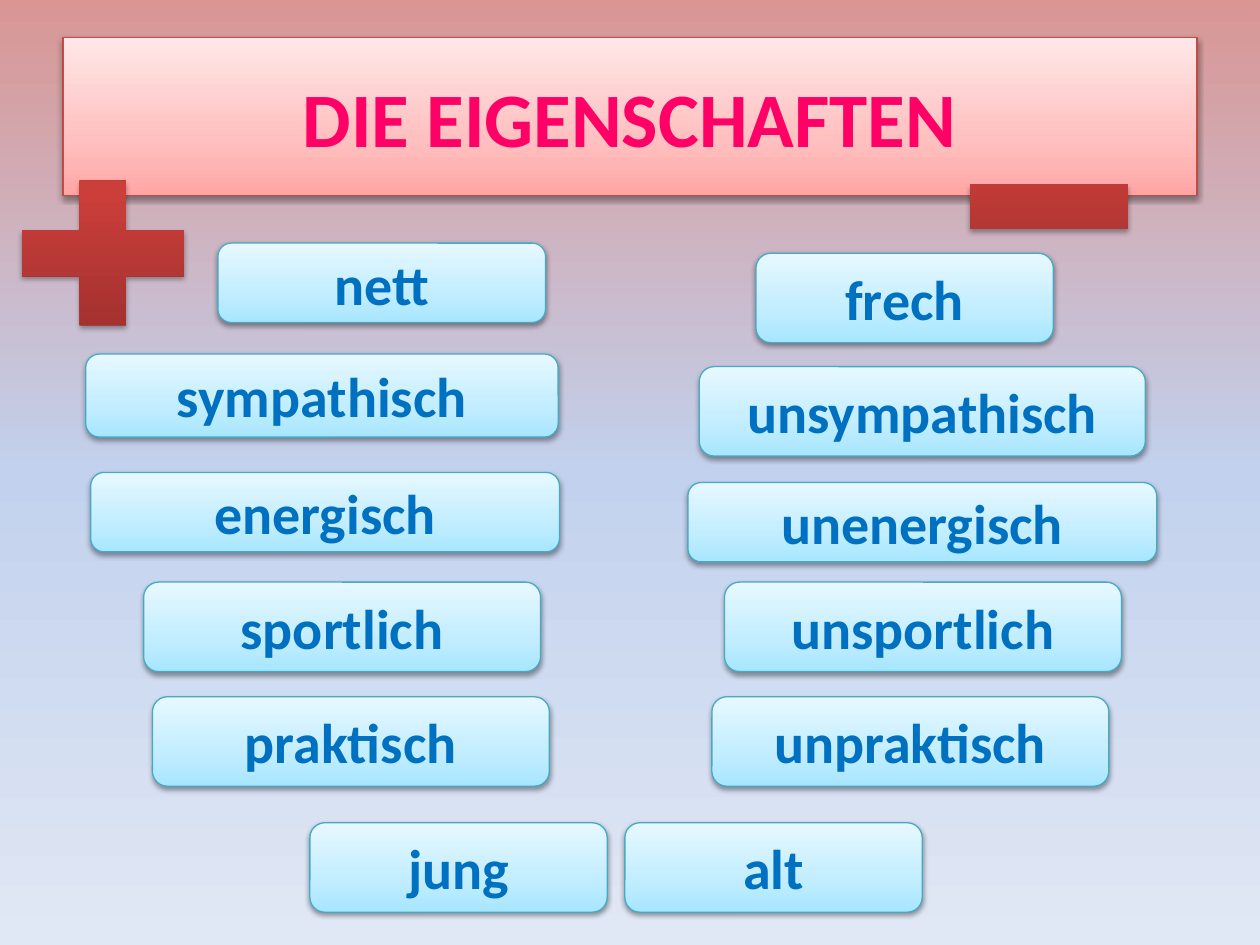
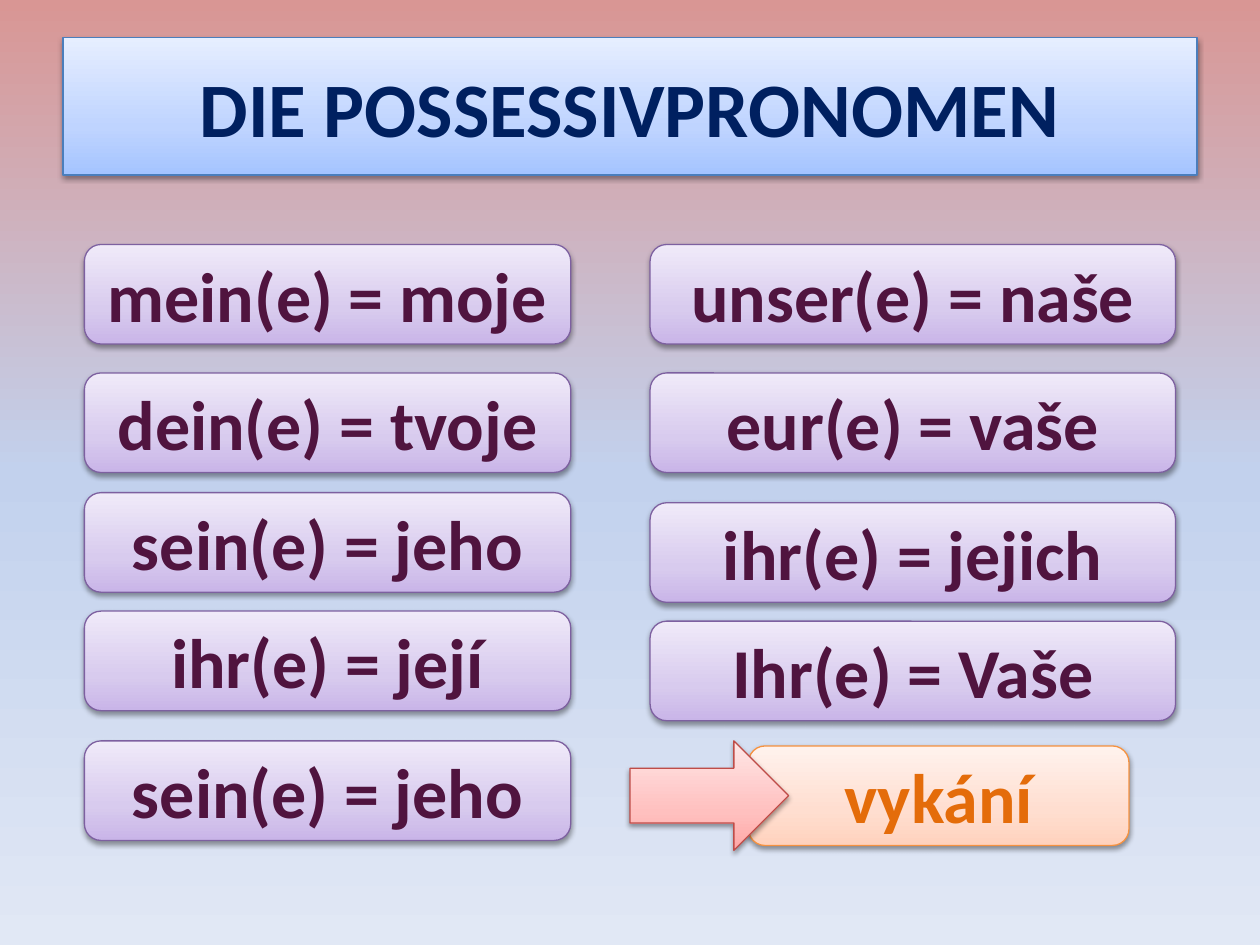
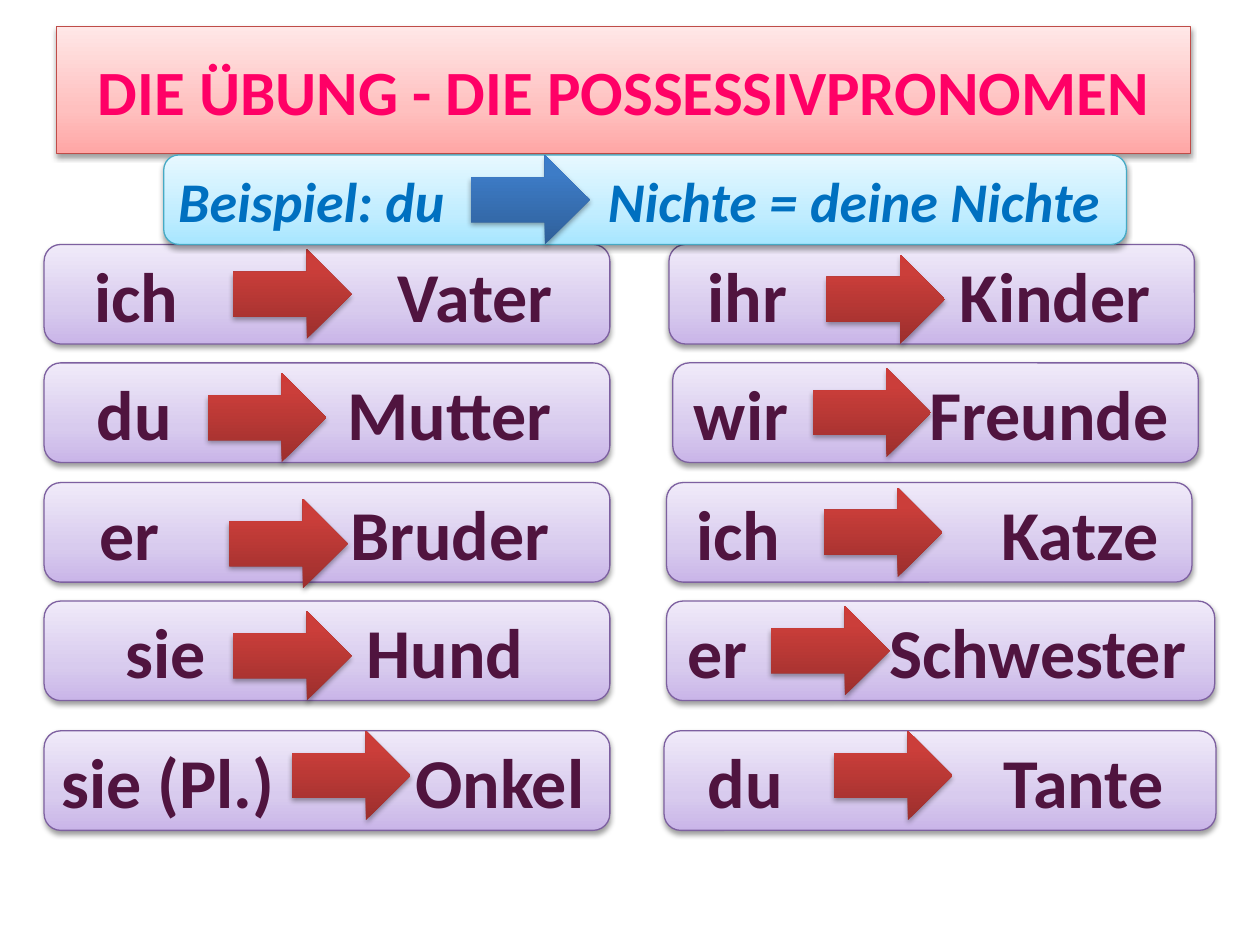
from lxml.etree import SubElement
from pptx import Presentation
from pptx.dml.color import RGBColor
from pptx.enum.shapes import MSO_SHAPE
from pptx.enum.text import MSO_ANCHOR, PP_ALIGN
from pptx.oxml.ns import qn
from pptx.util import Inches, Pt

# Grid: 100 columns by 75 rows of square cells
prs = Presentation()
prs.slide_width, prs.slide_height = Inches(10), Inches(7.5)
CELL = prs.slide_width // 100
FONT = "Calibri"
CARD = MSO_SHAPE.FLOWCHART_ALTERNATE_PROCESS
CARD_H = 7.9
ARROW_W, ARROW_H = 9.4, 7.1
CORNER = 0.4      # text inset caused by a card's round corner
BEARING = 0.3     # blank edge of a letter

# Fill stops (bottom to top) and line colour of each look
LOOKS = {
    "pink": ([(0, "FFA6A5"), (35, "FFC0BF"), (100, "FFE7E7")], "BF4C48"),
    "blue": ([(0, "A4C4FF"), (35, "BFD4FF"), (100, "E6EEFF")], "4B7EBC"),
    "aqua": ([(0, "A7E6FF"), (35, "C1EDFF"), (100, "E7F8FF")], "46AAC5"),
    "violet": ([(0, "C9B5E8"), (35, "D8CBEE"), (100, "F0EAF9")], "7D60A0"),
    "orange": ([(0, "FFD2BD"), (35, "FFDED0"), (100, "FFF2ED")], "F69240"),
    "red": ([(0, "9C2F2D"), (80, "CB3E3A"), (100, "CE3B37")], None),
    "navy": ([(0, "2F5F99"), (80, "3D7CC7"), (100, "3A7CCB")], None),
}
SKY = [(0, "D99694"), (50, "C2D1ED"), (100, "E1E8F5")]
MAGENTA, NAVY, BLUE, PLUM, AMBER = "FF0066", "002060", "0070C0", "50143F", "E46C0A"


def cells(n):
    return int(n * CELL)


def rgb(color):
    return RGBColor.from_string(color)


def gradient(fill, element, stops, angle):
    fill.gradient()
    fill.gradient_angle = angle
    stop_list = next(element.iter(qn("a:gsLst")))
    stop_list.clear()
    for pos, color in stops:
        gs = SubElement(stop_list, qn("a:gs"), pos=str(pos * 1000))
        SubElement(gs, qn("a:srgbClr"), val=color)


def dress(sp, look):
    """Gradient, outline and soft shadow."""
    stops, line = LOOKS[look]
    gradient(sp.fill, sp.element, stops, 90)
    if line:
        sp.line.color.rgb = rgb(line)
        sp.line.width = Pt(0.75)
    else:
        sp.line.fill.background()
    sp.shadow.inherit = False
    effects = next(sp.element.iter(qn("a:effectLst")))
    shadow = SubElement(effects, qn("a:outerShdw"), blurRad=str(Pt(3.1)),
                        dist=str(Pt(1.6 if line else 1.8)), dir="5400000", rotWithShape="0")
    black = SubElement(shadow, qn("a:srgbClr"), val="000000")
    SubElement(black, qn("a:alpha"), val="38000" if line else "35000")


def write(sp, text, size, color, italic=False, align=PP_ALIGN.CENTER, start=None, tab=None):
    """Bold text; start is the left margin, tab the stop measured from it."""
    tf = sp.text_frame
    tf.word_wrap = True
    tf.vertical_anchor = MSO_ANCHOR.MIDDLE
    p = tf.paragraphs[0]
    p.alignment = align
    if start is not None:
        tf.margin_left, tf.margin_right = cells(start), 0
    if tab is not None:
        tabs = SubElement(p._p.get_or_add_pPr(), qn("a:tabLst"))
        SubElement(tabs, qn("a:tab"), pos=str(cells(tab)), algn="l")
    r = p.add_run()
    r.text = text
    f = r.font
    f.name, f.size, f.bold, f.italic = FONT, Pt(size), True, italic
    f.color.rgb = rgb(color)


def shape(s, kind, box, look, text=None, **fmt):
    sp = s.shapes.add_shape(kind, *map(cells, box))
    dress(sp, look)
    if text:
        write(sp, text, **fmt)
    return sp


def titled_slide(text, box, look, color, size=44, sky=True):
    s = prs.slides.add_slide(prs.slide_layouts[5])
    if sky:
        gradient(s.background.fill, s.element, SKY, 270)
    else:
        s.background.fill.solid()
        s.background.fill.fore_color.rgb = rgb("FFFFFF")
    title = s.shapes.title
    title.left, title.top, title.width, title.height = map(cells, box)
    dress(title, look)
    write(title, text, size, color)
    return s


def adjectives(s, x, y, words):
    """Cards of varied size, offset from the corner of their region."""
    for text, dx, dy, w, h in words:
        shape(s, MSO_SHAPE.ROUNDED_RECTANGLE, (x + dx, y + dy, w, h), "aqua",
              text, size=32, color=BLUE)


def pronouns(s, x, y, w, rows):
    """One column of equally wide cards."""
    for dy, text in rows:
        shape(s, CARD, (x, y + dy, w, CARD_H), "violet", text, size=40, color=PLUM)


def arrow_card(s, box, look, words, word_cols, arrow, arrow_look, **fmt):
    """Two words, the second at a tab stop, and an arrow between them."""
    first, second = word_cols
    shape(s, CARD, box, look, "\t".join(words), align=PP_ALIGN.LEFT,
          start=first - CORNER - BEARING, tab=second - first, **fmt)
    dx, dy = arrow
    shape(s, MSO_SHAPE.RIGHT_ARROW, (box[0] + dx, box[1] + dy, ARROW_W, ARROW_H), arrow_look)


def exercise(s, x, y, rows):
    """Rows: words, card offset and width, word columns, arrow offset."""
    tops = (0, 9.4, 18.9, 28.3, 38.6)
    for dy, (words, dx, w, word_cols, arrow) in zip(tops, rows):
        arrow_card(s, (x + dx, y + dy, w, CARD_H), "violet", words, word_cols,
                   arrow, "red", size=40, color=PLUM)


def qualities_slide():
    s = titled_slide("DIE EIGENSCHAFTEN", (5, 3, 90, 12.5), "pink", MAGENTA)
    # Positive, then negative
    adjectives(s, 6.8, 19.3, [
        ("nett", 10.5, 0, 26, 6.3),
        ("sympathisch", 0, 8.8, 37.5, 6.6),
        ("energisch", 0.4, 18.2, 37.2, 6.3),
        ("sportlich", 4.6, 26.9, 31.5, 7.1),
        ("praktisch", 5.3, 36, 31.5, 7.1),
        ("jung", 17.8, 46, 23.6, 7.1),
    ])
    adjectives(s, 49.6, 20.1, [
        ("alt", 0, 45.2, 23.6, 7.1),
        ("frech", 10.4, 0, 23.6, 7.1),
        ("unsympathisch", 5.9, 9, 35.4, 7.1),
        ("unenergisch", 5, 18.2, 37.2, 6.3),
        ("unsportlich", 7.9, 26.1, 31.5, 7.1),
        ("unpraktisch", 6.9, 35.2, 31.5, 7.1),
    ])
    shape(s, MSO_SHAPE.MATH_PLUS, (-0.6, 12.3, 17.5, 15.6), "red")
    shape(s, MSO_SHAPE.MATH_MINUS, (74.7, 8.9, 17.1, 15), "red")


def pronouns_slide():
    s = titled_slide("DIE POSSESSIVPRONOMEN", (5, 3, 90, 10.9), "blue", NAVY)
    pronouns(s, 6.7, 19.4, 38.6, [
        (0, "mein(e) = moje"), (10.2, "dein(e) = tvoje"), (19.7, "sein(e) = jeho"),
        (29.1, "ihr(e) = její"), (39.4, "sein(e) = jeho"),
    ])
    pronouns(s, 51.6, 19.4, 41.7, [
        (0, "unser(e) = naše"), (10.2, "eur(e) = vaše"),
        (20.5, "ihr(e) = jejich"), (29.9, "Ihr(e) = Vaše"),
    ])
    # Note on the polite form
    shape(s, CARD, (59.4, 59.2, 30.2, CARD_H), "orange", "vykání", size=40, color=AMBER)
    shape(s, MSO_SHAPE.RIGHT_ARROW, (50, 58.8, 12.6, 8.7), "pink")


def exercise_slide():
    s = titled_slide("DIE ÜBUNG - DIE POSSESSIVPRONOMEN", (4.5, 2.1, 90, 10.1),
                     "pink", MAGENTA, size=36, sky=False)
    exercise(s, 3.5, 19.4, [
        (("ich", "Vater"), 0, 44.9, (4.3, 28.4), (15, 0.4)),
        (("du", "Mutter"), 0, 44.9, (4.5, 24.4), (13, 0.8)),
        (("er", "Bruder"), 0, 44.9, (4.7, 24.6), (14.7, 1.3)),
        (("sie", "Hund"), 0, 44.9, (6.8, 25.9), (15, 0.8)),
        (("sie (Pl.)", "Onkel"), 0, 44.9, (1.7, 29.8), (19.7, 0)),
    ])
    exercise(s, 52.7, 19.4, [
        (("ihr", "Kinder"), 0.4, 41.7, (3.4, 23.4), (12.5, 0.8)),
        (("wir", "Freunde"), 0.7, 41.7, (2, 20.7), (11.1, 0.4)),
        (("ich", "Katze"), 0.2, 41.7, (2.7, 26.9), (12.5, 0.4)),
        (("er", "Schwester"), 0.2, 43.5, (2, 18), (8.3, 0.4)),
        (("du", "Tante"), 0, 43.8, (3.8, 27.3), (13.5, 0)),
    ])
    # Worked example
    arrow_card(s, (13, 12.3, 76.4, 7.1), "aqua", ("Beispiel: du", "Nichte = deine Nichte"),
               (1.5, 35.6), (24.4, 0), "navy", size=32, color=BLUE, italic=True)


if __name__ == "__main__":
    qualities_slide()
    pronouns_slide()
    exercise_slide()
    prs.save("out.pptx")
